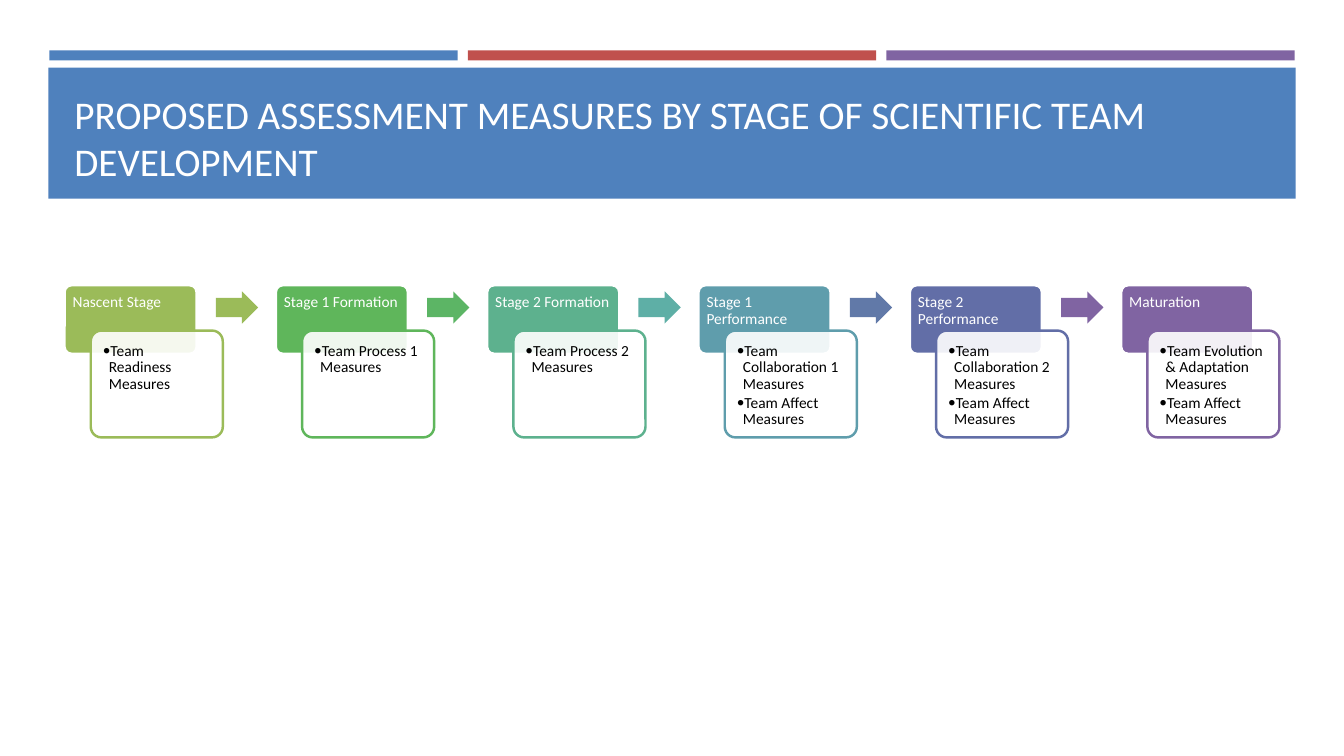
"""Build the slide of assessment measures by stage of team development."""
from lxml import etree
from pptx import Presentation, util as u
from pptx.dml.color import RGBColor
from pptx.enum import shapes, text
from pptx.oxml.ns import qn

TITLE = "PROPOSED ASSESSMENT MEASURES BY STAGE OF SCIENTIFIC TEAM DEVELOPMENT"
BARS = ["4F81BD", "C0504D", "8064A2"]
AFFECT = "Team Affect Measures"
STAGES = [
    ("Nascent Stage", "9BBB59", "9BBB59", ["Team Readiness Measures"]),
    ("Stage 1 Formation", "5FB65B", "5CB565", ["Team Process 1 Measures"]),
    ("Stage 2 Formation", "5DB18E", "5EAFA6", ["Team Process 2 Measures"]),
    ("Stage 1 Performance", "5F9DAC", "6179A8",
     ["Team Collaboration 1 Measures", AFFECT]),
    ("Stage 2 Performance", "626EA7", "8064A2",
     ["Team Collaboration 2 Measures", AFFECT]),
    ("Maturation", "8064A2", None,
     ["Team Evolution & Adaptation Measures", AFFECT]),
]
WIDE, HIGH = 13.33, 7.5
LEFT, LAST, TOP = 0.64, 11.12, 2.83
STEP = (LAST - LEFT) / (len(STAGES) - 1)
FORM = shapes.MSO_SHAPE

deck = Presentation()
deck.slide_width, deck.slide_height = u.Inches(WIDE), u.Inches(HIGH)
slide = deck.slides.add_slide(deck.slide_layouts[6])


def tint(part, color):
    part.solid()
    part.fore_color.rgb = RGBColor.from_string(color)


def draw(kind, box, fill, line=None, adj=(), alpha=None):
    item = slide.shapes.add_shape(kind, *map(u.Inches, box))
    item.shadow.inherit = False
    tint(item.fill, fill)
    if alpha:
        hue = item.fill._xPr.find(".//" + qn("a:srgbClr"))
        etree.SubElement(hue, qn("a:alpha"), val=str(alpha * 1000))
    if line:
        tint(item.line.fill, line)
        item.line.width = u.Pt(1.75)
    else:
        item.line.fill.background()
    for i, val in enumerate(adj):
        item.adjustments[i] = val


def write(box, lines, size, color, pads, space=None, after=0, dot=False,
          anchor=text.MSO_ANCHOR.TOP):
    frame = slide.shapes.add_textbox(*map(u.Inches, box)).text_frame
    frame.word_wrap = True
    frame.vertical_anchor = anchor
    (frame.margin_left, frame.margin_top,
     frame.margin_right, frame.margin_bottom) = map(u.Inches, pads)
    for i, line in enumerate(lines):
        para = frame.add_paragraph() if i else frame.paragraphs[0]
        para.line_spacing = space
        para.space_after = u.Pt(after)
        if dot:
            para.level = 1
            prop = para._p.get_or_add_pPr()
            prop.set("marL", str(u.Inches(0.06)))
            prop.set("indent", str(u.Inches(-0.06)))
            etree.SubElement(prop, qn("a:buFont"), typeface="Calibri")
            etree.SubElement(prop, qn("a:buChar"), char="•")
        run = para.add_run()
        run.text = line
        run.font.name, run.font.size = "Calibri", u.Pt(size)
        tint(run.font.fill, color)


for i, color in enumerate(BARS):
    draw(FORM.RECTANGLE, (0.49 + i * 4.15, 0.5, 4.05, 0.1), color)
draw(FORM.RECTANGLE, (0.48, 0.67, 12.37, 1.3), BARS[0])
write((LEFT, 0.77, 12.06, 1.11), [TITLE], 28, "FFFFFF",
      (0.1, 0.05, 0.1, 0.05), anchor=text.MSO_ANCHOR.BOTTOM)

for i, (name, color, arrow, items) in enumerate(STAGES):
    x = LEFT + i * STEP
    draw(FORM.ROUNDED_RECTANGLE, (x, TOP, 1.31, 0.68), color, "FFFFFF", [0.1])
    write((x, TOP, 1.31, 0.45), [name], 11, "FFFFFF",
          (0.08, 0.09, 0.08, 0.05), 0.9, 3.85)
    draw(FORM.ROUNDED_RECTANGLE, (x + 0.26, TOP + 0.45, 1.31, 1.06),
         "FFFFFF", color, [0.1], 90)
    write((x + 0.29, TOP + 0.48, 1.24, 1), items, 11, "000000",
          (0.09,) * 4, 0.9, 1.65, True)
    if arrow:
        draw(FORM.RIGHT_ARROW, (x + 1.5, TOP + 0.06, 0.42, 0.32), arrow,
             adj=(0.6, 0.5))

deck.save("out.pptx")
